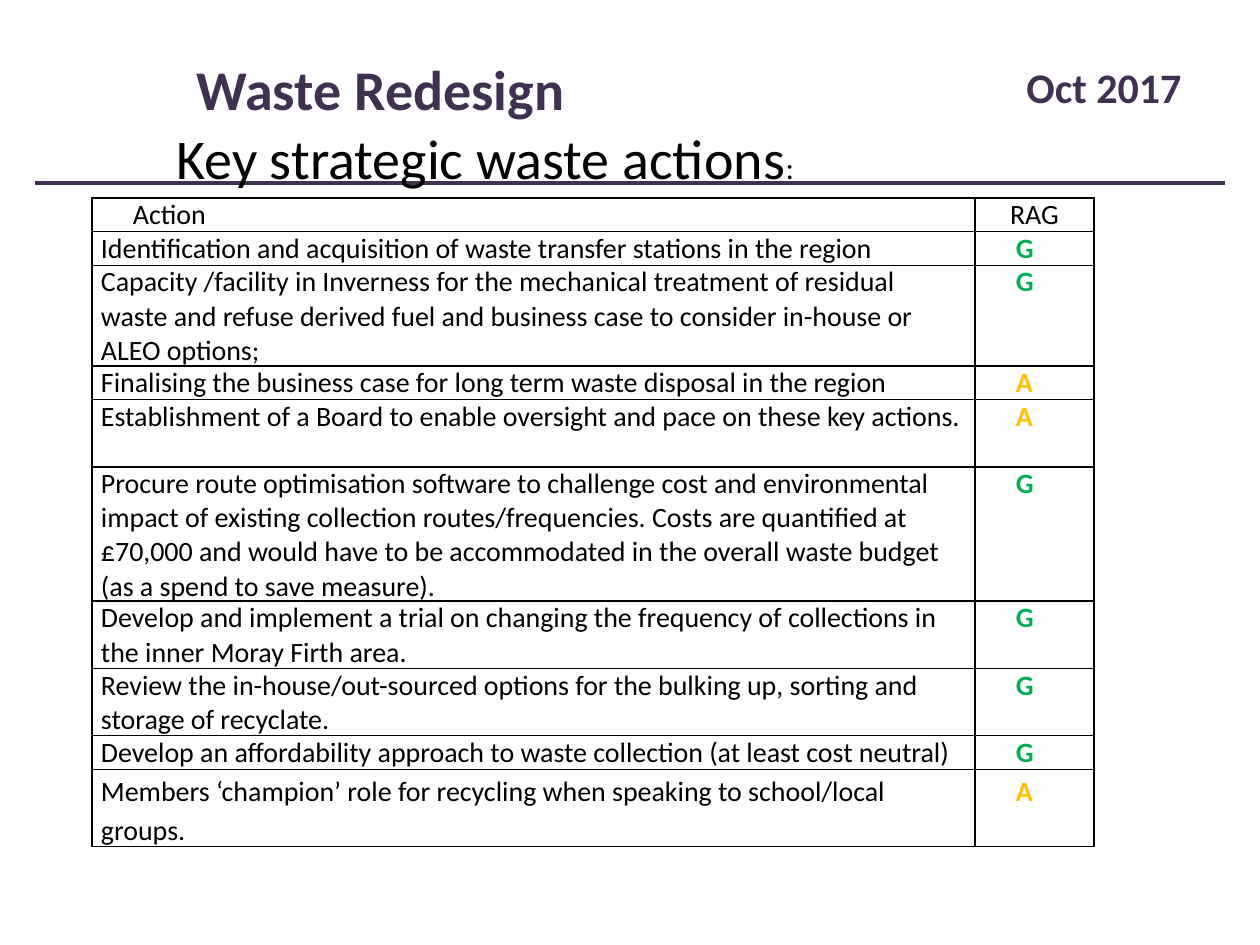
from dataclasses import dataclass

from lxml import etree
from pptx import Presentation
from pptx import util as u
from pptx.dml.color import RGBColor
from pptx.enum import shapes, text
from pptx.oxml import ns


@dataclass(frozen=True)
class Theme:
    font: str = "Calibri"
    accent: str = "403152"
    ink: str = "000000"
    green: str = "00B050"
    amber: str = "FFC000"
    heading: int = 32
    date: int = 24
    small: int = 18
    body: int = 16


THEME = Theme()
RAG_COLORS = {"G": THEME.green, "A": THEME.amber}
LINE_HEIGHT = 33.6  # px per line of table text
ACTIONS = [  # action, rating, lines of height, line spacing
    ("Identification and acquisition of waste transfer stations in the region", "G", 1, None),
    ("Capacity /facility in Inverness for the mechanical treatment of residual waste and refuse "
     "derived fuel and business case to consider in-house or ALEO options;", "G", 3, None),
    ("Finalising the business case for long term waste disposal in the region", "A", 1, None),
    ("Establishment of a Board to enable oversight and pace on these key actions.", "A", 2, None),
    ("Procure route optimisation software to challenge cost and environmental impact of existing "
     "collection routes/frequencies. Costs are quantified at £70,000 and would have to be "
     "accommodated in the overall waste budget (as a spend to save measure).", "G", 4, None),
    ("Develop and implement a trial on changing the frequency of collections in the inner Moray "
     "Firth area.", "G", 2, None),
    ("Review the in-house/out-sourced options for the bulking up, sorting and storage of "
     "recyclate.", "G", 2, None),
    ("Develop an affordability approach to waste collection (at least cost neutral)", "G", 1, None),
    ("Members ‘champion’ role for recycling when speaking to school/local groups.", "A", 2.3, 1.15),
]


def px(n):
    return u.Emu(round(n * 914400 / 126))


def set_all(obj, values):
    for name, value in values.items():
        setattr(obj, name, value)


class Builder:
    def __init__(self, prs, theme):
        self.theme = theme
        self.s = prs.slides.add_slide(prs.slide_layouts[5])

    def run(self, p, content, size, color, bold=False):
        r = p.add_run()
        r.text = content
        set_all(r.font, {"name": self.theme.font, "size": u.Pt(size), "bold": bold})
        r.font.color.rgb = RGBColor.from_string(color)

    def fill_text(self, sp, box, runs):
        set_all(sp, dict(zip(("left", "top", "width", "height"), map(px, box))))
        tf = sp.text_frame
        set_all(tf, {"word_wrap": False, "auto_size": text.MSO_AUTO_SIZE.SHAPE_TO_FIT_TEXT,
                     "vertical_anchor": text.MSO_ANCHOR.TOP})
        p = tf.paragraphs[0]
        p.alignment = text.PP_ALIGN.LEFT
        for args in runs:
            self.run(p, *args)

    def title(self, box, *runs):
        self.fill_text(self.s.shapes.title, box, runs)

    def label(self, box, *runs):
        self.fill_text(self.s.shapes.add_textbox(0, 0, 0, 0), box, runs)

    def rule(self, x1, x2, y, width):
        line = self.s.shapes.add_connector(
            shapes.MSO_CONNECTOR.STRAIGHT, px(x1), px(y), px(x2), px(y))
        line.line.color.rgb = RGBColor.from_string(self.theme.accent)
        line.line.width = u.Pt(width)
        etree.SubElement(line._element.spPr, ns.qn("a:effectLst"))

    def table(self, left, top, widths, heights):
        frame = self.s.shapes.add_table(len(heights), len(widths), px(left), px(top),
                                        px(sum(widths)), px(sum(heights)))
        table = frame.table
        set_all(table, {"first_row": False, "horz_banding": False})
        for column, width in zip(table.columns, widths):
            column.width = px(width)
        for row, height in zip(table.rows, heights):
            row.height = px(height)
        return table

    def cell(self, cell, content, color=None, bold=False, indent=0, align=None, spacing=None):
        set_all(cell, {"margin_left": px(9), "margin_right": px(9),
                       "margin_top": 0, "margin_bottom": 0})
        p = cell.text_frame.paragraphs[0]
        set_all(p, {"alignment": align, "line_spacing": spacing})
        if indent:
            p._p.get_or_add_pPr().set("marL", str(px(indent)))
        self.run(p, content, self.theme.body, color or self.theme.ink, bold)
        self.borders(cell)
        cell.fill.background()

    def borders(self, cell):
        tc_pr = cell._tc.get_or_add_tcPr()
        for side in ("lnL", "lnR", "lnT", "lnB"):
            line = etree.SubElement(tc_pr, ns.qn("a:" + side), w=str(u.Pt(1)))
            fill = etree.SubElement(line, ns.qn("a:solidFill"))
            etree.SubElement(fill, ns.qn("a:srgbClr"), val=self.theme.ink)


def main():
    prs = Presentation()
    prs.slide_width, prs.slide_height = px(1260), px(945)
    t = THEME
    b = Builder(prs, t)

    b.title((184, 48, 409, 81), ("Waste Redesign", t.heading, t.accent, True))
    b.rule(35, 1225, 183, 2.5)
    b.label((1014, 55, 181, 63), ("Oct 2017", t.date, t.accent, True))
    b.label((164, 117, 656, 81), ("Key strategic waste actions", t.heading, t.ink),
            (":", t.small, t.ink))

    heights = [LINE_HEIGHT] + [LINE_HEIGHT * lines for _, _, lines, _ in ACTIONS]
    table = b.table(92, 198, (883, 119), heights)
    b.cell(table.cell(0, 0), "Action", indent=32)
    b.cell(table.cell(0, 1), "RAG", align=text.PP_ALIGN.CENTER)
    for i, (action, rag, _, spacing) in enumerate(ACTIONS, 1):
        b.cell(table.cell(i, 0), action, spacing=spacing)
        b.cell(table.cell(i, 1), rag, RAG_COLORS[rag], True, indent=32, spacing=spacing)

    prs.save("out.pptx")


if __name__ == "__main__":
    main()
